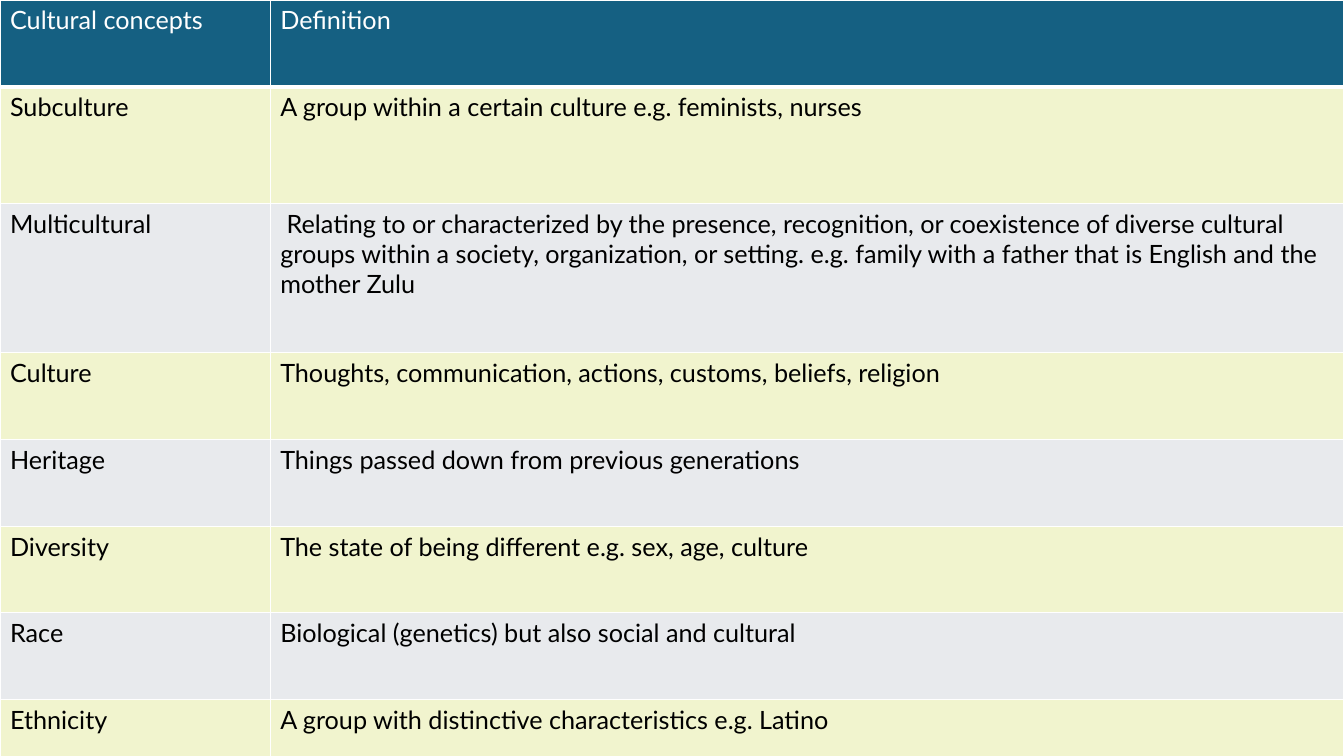
from lxml import etree
from pptx import Presentation
from pptx.dml.color import RGBColor
from pptx.oxml.ns import qn
from pptx.util import Inches, Pt

FONT = "Lato"
WHITE, BLACK = "FFFFFF", "000000"
HEADER_FILL = "156082"
BAND_FILLS = ["F1F4CE", "E8EAED"]
COLUMN_WIDTHS = [2.68, 10.65]
ROW_HEIGHTS = [0.86, 1.16, 1.48] + [0.86] * 5
CONCEPTS = [
    ("Cultural concepts", "Definition"),
    ("Subculture", "A group within a certain culture e.g. feminists, nurses"),
    ("Multicultural", " Relating to or characterized by the presence, recognition, or coexistence "
     "of diverse cultural groups within a society, organization, or setting. "
     "e.g. family with a father that is English and the mother Zulu"),
    ("Culture", "Thoughts, communication, actions, customs, beliefs, religion"),
    ("Heritage", "Things passed down from previous generations"),
    ("Diversity", "The state of being different e.g. sex, age, culture"),
    ("Race", "Biological (genetics) but also social and cultural"),
    ("Ethnicity", "A group with distinctive characteristics e.g. Latino"),
]


def color(value):
    return RGBColor.from_string(value)


def set_borders(cell, bottom_width):
    properties = cell._tc.get_or_add_tcPr()
    for side, width in (("lnL", 1), ("lnR", 1), ("lnT", 1), ("lnB", bottom_width)):
        line = etree.SubElement(properties, qn(f"a:{side}"), w=str(Pt(width)))
        fill = etree.SubElement(line, qn("a:solidFill"))
        etree.SubElement(fill, qn("a:srgbClr"), val=WHITE)


def fill_cell(cell, words, is_header, background):
    set_borders(cell, 3 if is_header else 1)
    cell.fill.solid()
    cell.fill.fore_color.rgb = color(background)
    run = cell.text_frame.paragraphs[0].add_run()
    run.text = words
    run.font.name = FONT
    run.font.size = Pt(18)
    run.font.bold = False
    run.font.color.rgb = color(WHITE if is_header else BLACK)


def main():
    presentation = Presentation()
    presentation.slide_width = Inches(13.33)
    presentation.slide_height = Inches(7.5)
    slide = presentation.slides.add_slide(presentation.slide_layouts[6])
    table = slide.shapes.add_table(
        len(CONCEPTS), len(COLUMN_WIDTHS), 0, 0,
        Inches(sum(COLUMN_WIDTHS)), Inches(sum(ROW_HEIGHTS))).table
    for column, width in zip(table.columns, COLUMN_WIDTHS):
        column.width = Inches(width)
    for index, (row, height, concept) in enumerate(zip(table.rows, ROW_HEIGHTS, CONCEPTS)):
        row.height = Inches(height)
        is_header = index == 0
        background = HEADER_FILL if is_header else BAND_FILLS[(index - 1) % 2]
        for cell, words in zip(row.cells, concept):
            fill_cell(cell, words, is_header, background)
    presentation.save("out.pptx")


if __name__ == "__main__":
    main()
